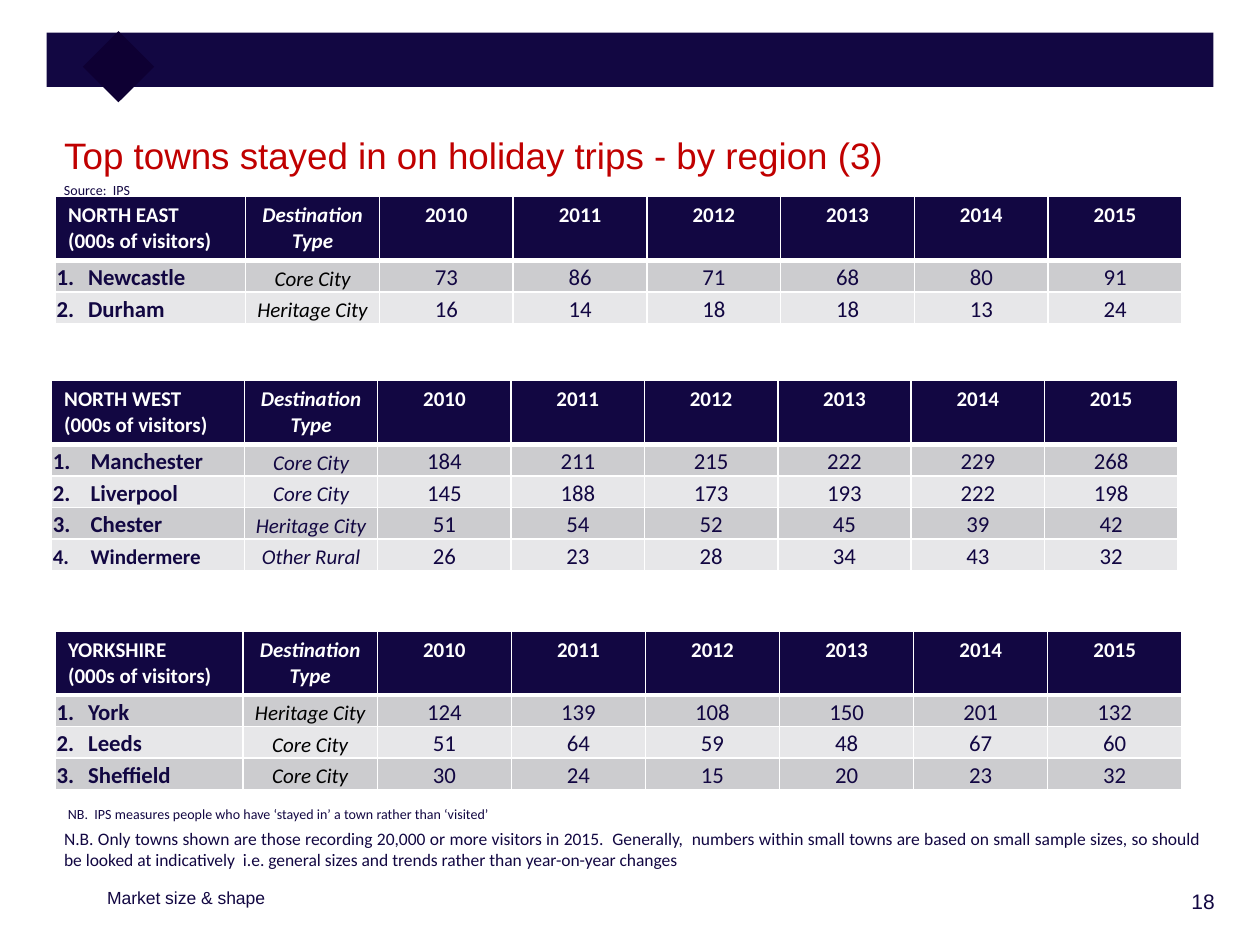
"""Build the slide of top holiday towns by region, with one table per region."""
from lxml import etree
from pptx import Presentation
from pptx.dml.color import RGBColor
from pptx.enum import shapes, text
from pptx.oxml import ns
from pptx.util import Inches, Pt

NAVY = RGBColor(0x12, 0x07, 0x42)
DEEP = RGBColor(0x0E, 0x00, 0x33)
RED = RGBColor(0xC0, 0x00, 0x00)
WHITE = RGBColor(0xFF, 0xFF, 0xFF)
BLACK = RGBColor(0x00, 0x00, 0x00)
BANDS = (RGBColor(0xCC, 0xCC, 0xCF), RGBColor(0xE7, 0xE7, 0xE9))

LEFT, CENTER = text.PP_ALIGN.LEFT, text.PP_ALIGN.CENTER
RIGHT, JUSTIFY = text.PP_ALIGN.RIGHT, text.PP_ALIGN.JUSTIFY

TITLE = "Top towns stayed in on holiday trips - by region (3)"
SECTION = "Market size & shape"
NOTES = [
    ("Source:  IPS", (0.41, 1.39, 0.8, 0.18), dict(size=8)),
    ("NB.  IPS measures people who have ‘stayed in’ a town rather than ‘visited’",
     (0.44, 6.34, 3.78, 0.18), dict(size=8)),
    ("N.B. Only towns shown are those recording 20,000 or more visitors in 2015.  "
     "Generally,  numbers within small towns are based on small sample sizes, so should "
     "be looked at indicatively  i.e. general sizes and trends rather than year-on-year changes",
     (0.41, 6.52, 9.21, 0.28), dict(size=10, align=JUSTIFY)),
    ("18", (8.53, 7, 1.21, 0.36), dict(size=12, font="Arial", align=RIGHT)),
]
YEARS = range(2010, 2016)
REGIONS = [
    dict(name="NORTH EAST", left=0.44, top=1.56, first=1.51, indent=0.25, type_color=BLACK, towns=[
        ("Newcastle", "Core City", (73, 86, 71, 68, 80, 91)),
        ("Durham", "Heritage City", (16, 14, 18, 18, 13, 24)),
    ]),
    dict(name="NORTH WEST", left=0.41, top=3.02, first=1.53, indent=0.3, type_color=NAVY, towns=[
        ("Manchester", "Core City", (184, 211, 215, 222, 229, 268)),
        ("Liverpool", "Core City", (145, 188, 173, 193, 222, 198)),
        ("Chester", "Heritage City", (51, 54, 52, 45, 39, 42)),
        ("Windermere", "Other Rural", (26, 23, 28, 34, 43, 32)),
    ]),
    dict(name="YORKSHIRE", left=0.44, top=5.01, first=1.49, indent=0.25, type_color=BLACK, towns=[
        ("York", "Heritage City", (124, 139, 108, 150, 201, 132)),
        ("Leeds", "Core City", (51, 64, 59, 48, 67, 60)),
        ("Sheffield", "Core City", (30, 24, 15, 20, 23, 32)),
    ]),
]
TABLE_WIDTH, HEADER_HEIGHT, ROW_HEIGHT = 8.94, 0.5, 0.25
SMALLER_NAMES = {"Windermere": 12}


def write(frame, words, size=12, font="Calibri", color=NAVY, bold=False, italic=False,
          align=LEFT, number=None, indent=0):
    para = frame.paragraphs[0]
    para.text = words
    para.alignment = align
    para.space_before = Pt(0)
    properties = para._p.get_or_add_pPr()
    properties.set("marL", str(Inches(indent)))
    properties.set("indent", str(-Inches(indent)))
    if number:
        bullet = etree.SubElement(properties, ns.qn("a:buAutoNum"), type="arabicPeriod")
        bullet.set("startAt", str(number))
    else:
        etree.SubElement(properties, ns.qn("a:buNone"))
    for span in para.runs:
        span.font.size, span.font.name = Pt(size), font
        span.font.bold, span.font.italic = bold, italic
        span.font.color.rgb = color


def place(box, left, top, width, height):
    box.left, box.top = Inches(left), Inches(top)
    box.width, box.height = Inches(width), Inches(height)
    box.text_frame.word_wrap = True
    box.text_frame.auto_size = text.MSO_AUTO_SIZE.NONE
    box.text_frame.vertical_anchor = text.MSO_ANCHOR.TOP


def add_block(page, position, color, rotation=0):
    block = page.shapes.add_shape(shapes.MSO_SHAPE.RECTANGLE, *map(Inches, position))
    block.shadow.inherit = False
    block.fill.solid()
    block.fill.fore_color.rgb = color
    block.line.fill.background()
    block.rotation = rotation


def paint(cell, color, top=1, bottom=1):
    properties = cell._tc.get_or_add_tcPr()
    for side, points in (("L", 1), ("R", 1), ("T", top), ("B", bottom)):
        line = etree.SubElement(properties, ns.qn(f"a:ln{side}"), w=str(Pt(points)))
        fill = etree.SubElement(line, ns.qn("a:solidFill"))
        etree.SubElement(fill, ns.qn("a:srgbClr"), val=str(WHITE))
    cell.fill.solid()
    cell.fill.fore_color.rgb = color


def add_region(page, region):
    towns = region["towns"]
    columns = len(YEARS) + 2
    height = HEADER_HEIGHT + ROW_HEIGHT * len(towns)
    table = page.shapes.add_table(
        len(towns) + 1, columns, Inches(region["left"]), Inches(region["top"]),
        Inches(TABLE_WIDTH), Inches(height)).table
    table.horz_banding = False
    for index, column in enumerate(table.columns):
        share = (TABLE_WIDTH - region["first"]) / (columns - 1)
        column.width = Inches(share if index else region["first"])
    for index, row in enumerate(table.rows):
        row.height = Inches(ROW_HEIGHT if index else HEADER_HEIGHT)

    headings = [f"{region['name']}\v(000s of visitors)", "Destination Type", *map(str, YEARS)]
    for column, heading in enumerate(headings):
        cell = table.cell(0, column)
        paint(cell, NAVY, bottom=3)
        write(cell.text_frame, heading, color=WHITE, bold=True, italic=column == 1,
              align=CENTER if column else LEFT)

    for number, (town, kind, visitors) in enumerate(towns, 1):
        formats = [
            dict(size=SMALLER_NAMES.get(town, 13), bold=True, number=number, indent=region["indent"]),
            dict(italic=True, color=region["type_color"], align=CENTER),
        ] + [dict(size=13, align=CENTER)] * len(YEARS)
        for column, (value, style) in enumerate(zip((town, kind, *visitors), formats)):
            cell = table.cell(number, column)
            cell.margin_left = cell.margin_right = cell.margin_top = Inches(0.01)
            cell.margin_bottom = 0
            cell.vertical_anchor = text.MSO_ANCHOR.BOTTOM
            paint(cell, BANDS[(number - 1) % 2], top=3 if number == 1 else 1)
            write(cell.text_frame, str(value), **style)


def main():
    deck = Presentation()
    deck.slide_width, deck.slide_height = Inches(10), Inches(7.5)
    page = deck.slides.add_slide(deck.slide_layouts[1])

    add_block(page, (0.37, 0.26, 9.26, 0.43), NAVY)
    add_block(page, (0.74, 0.33, 0.4, 0.4), DEEP, rotation=45)

    title, section = page.placeholders
    place(title, 0.41, 0.95, 9.69, 0.61)
    title.text_frame.margin_top = Inches(0.1)
    write(title.text_frame, TITLE, size=21, font="Arial", color=RED)
    place(section, 0.75, 6.99, 2.67, 0.3)
    write(section.text_frame, SECTION, size=10, font="Arial")

    for region in REGIONS:
        add_region(page, region)
    for words, position, style in NOTES:
        box = page.shapes.add_textbox(0, 0, 0, 0)
        place(box, *position)
        write(box.text_frame, words, **style)

    deck.save("out.pptx")


if __name__ == "__main__":
    main()
